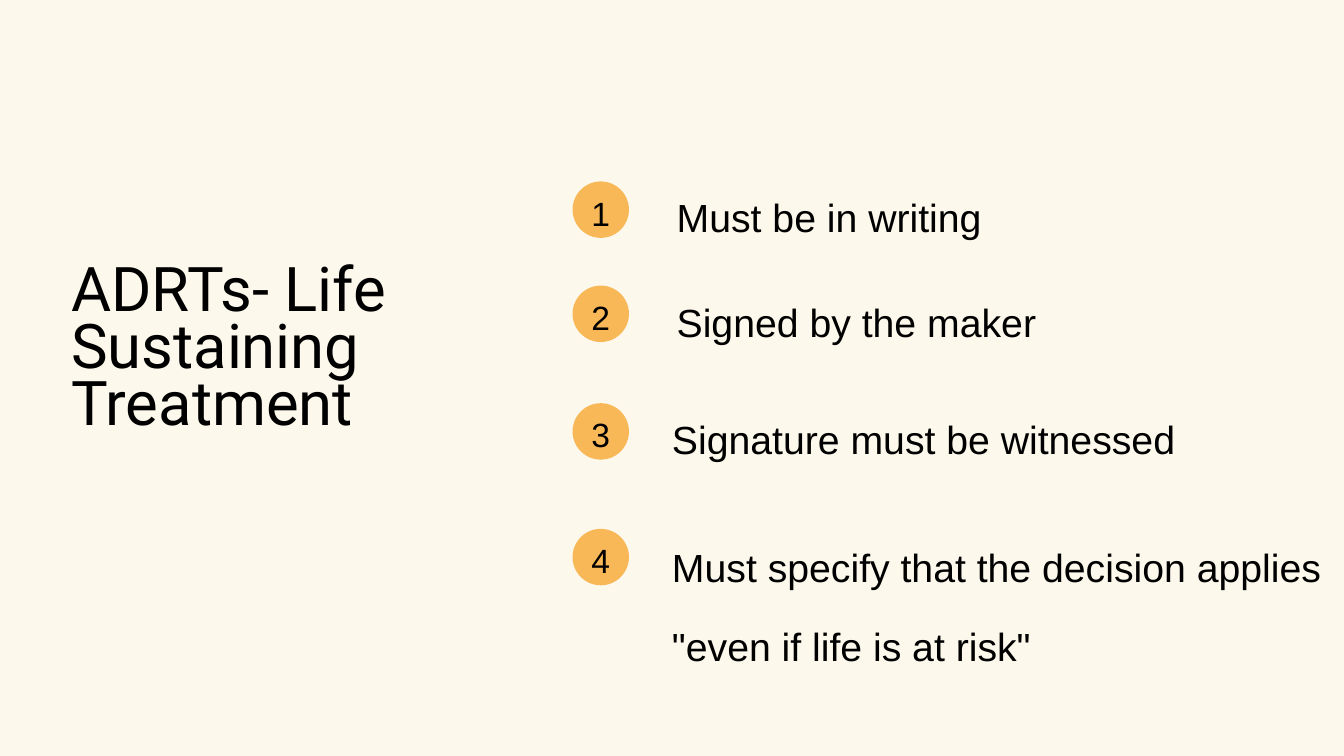
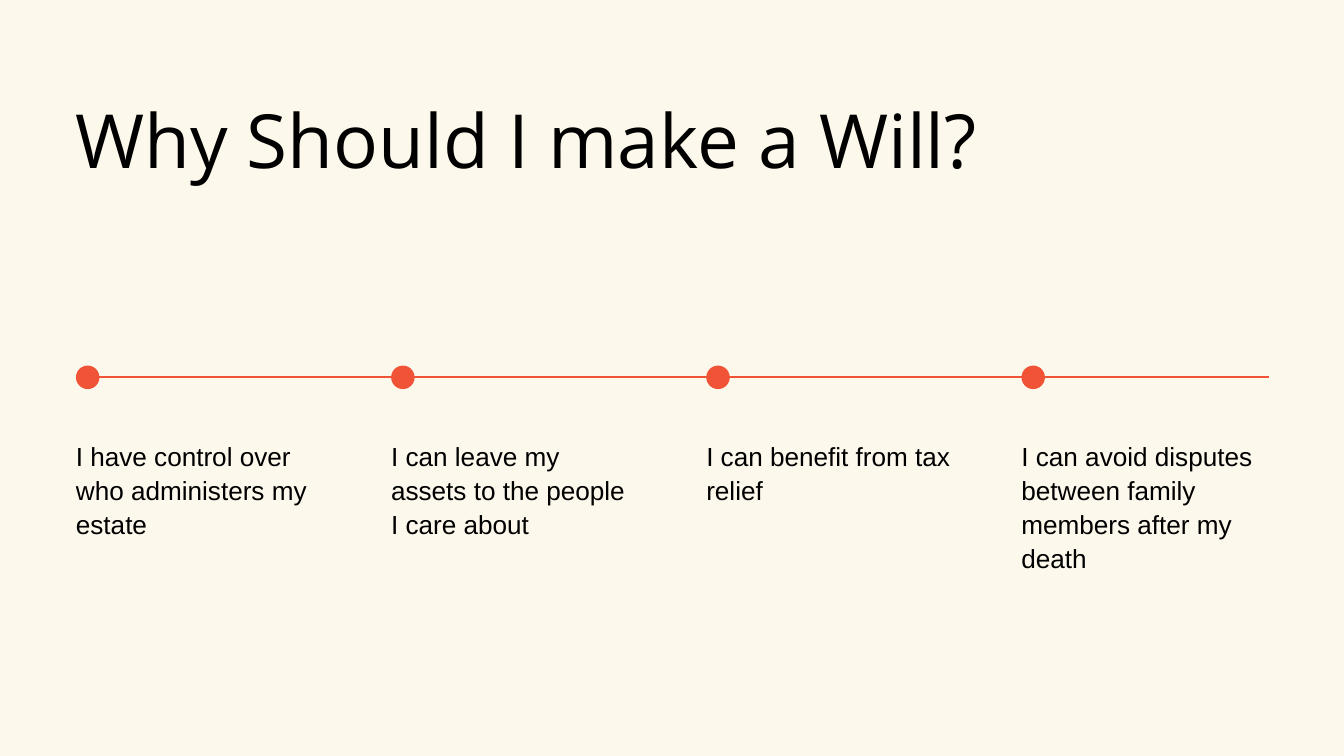
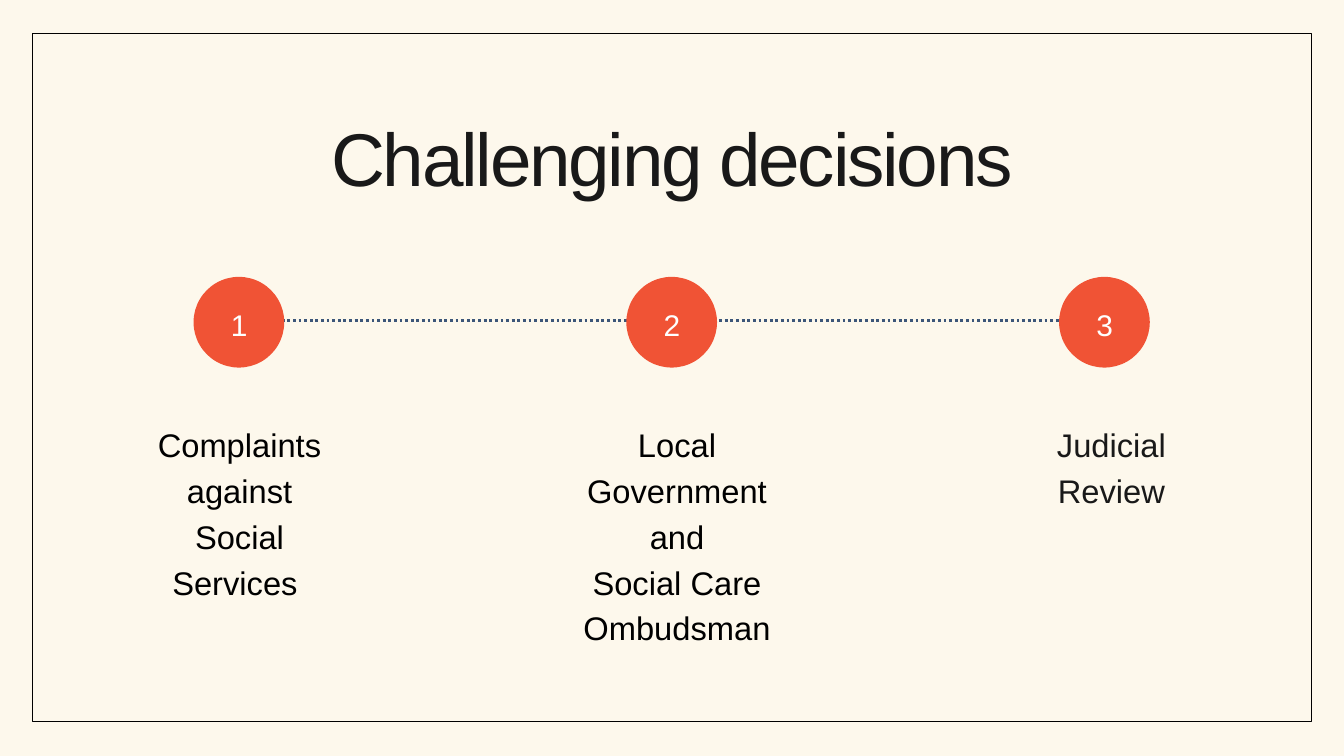
from lxml.etree import SubElement
from pptx import Presentation
from pptx.dml.color import RGBColor
from pptx.enum.dml import MSO_LINE
from pptx.enum.shapes import MSO_CONNECTOR, MSO_SHAPE
from pptx.enum.text import PP_ALIGN
from pptx.oxml.ns import qn
from pptx.util import Inches, Pt

CREAM, BLACK, CHARCOAL, WHITE = "FDF8EC", "000000", "191919", "FEFFFF"
AMBER, CORAL, SLATE = "F8B858", "F05335", "3C5679"


def color(value):
    return RGBColor.from_string(value)


class Deck:
    """Holds the shared style and the slide being built."""

    def __init__(self):
        self.deck = Presentation()
        self.deck.slide_width = Inches(20)
        self.deck.slide_height = Inches(11.25)
        self.page = None

    def new_page(self):
        self.page = self.deck.slides.add_slide(self.deck.slide_layouts[6])
        fill = self.page.background.fill
        fill.solid()
        fill.fore_color.rgb = color(CREAM)

    def text(self, left, top, width, height, paragraphs, size, leading,
             font="Arial", ink=BLACK, centered=False, tracking=None):
        box = self.page.shapes.add_textbox(
            Inches(left), Inches(top), Inches(width), Inches(height))
        frame = box.text_frame
        frame.word_wrap = True
        frame.margin_left = frame.margin_right = 0
        frame.margin_top = frame.margin_bottom = 0
        for index, words in enumerate(paragraphs):
            para = frame.add_paragraph() if index else frame.paragraphs[0]
            para.alignment = PP_ALIGN.CENTER if centered else PP_ALIGN.LEFT
            para.line_spacing = Pt(leading)
            span = para.add_run()
            span.text = words
            span.font.name = font
            span.font.size = Pt(size)
            span.font.color.rgb = color(ink)
            if tracking:
                span.font._element.set("spc", str(round(tracking * 100)))

    def shape(self, kind, left, top, width, height, fill, outline=None):
        shape = self.page.shapes.add_shape(
            kind, Inches(left), Inches(top), Inches(width), Inches(height))
        shape.shadow.inherit = False
        shape.fill.solid()
        shape.fill.fore_color.rgb = color(fill)
        if outline:
            shape.line.color.rgb = color(outline)
            shape.line.width = Pt(1.5)
        else:
            shape.line.fill.background()

    def circle(self, left, top, diameter, fill):
        self.shape(MSO_SHAPE.OVAL, left, top, diameter, diameter, fill)

    def rule(self, start, end, y, ink, weight, dash=None):
        line = self.page.shapes.add_connector(
            MSO_CONNECTOR.STRAIGHT, Inches(start), Inches(y), Inches(end), Inches(y))
        line.line.color.rgb = color(ink)
        line.line.width = Pt(weight)
        if dash:
            line.line.dash_style = dash
        SubElement(line._element.spPr, qn("a:effectLst"))


def build_requirements(deck):
    deck.new_page()
    deck.text(1.06, 3.97, 6.37, 2.59, ["ADRTs- Life Sustaining Treatment"],
              66, 61.2, font="Roboto")
    requirements = [
        (2.7, 10.07, 2.41, 1.05, "Must be in writing"),
        (4.25, 10.07, 3.97, 1.05, "Signed by the maker"),
        (6, 10, 5.72, 1.05, "Signature must be witnessed"),
        (7.87, 10, 7.62, 2.22,
         'Must specify that the decision applies "even if life is at risk"'),
    ]
    for number, (badge_top, left, top, height, words) in enumerate(requirements, 1):
        deck.circle(8.52, badge_top, 0.84, AMBER)
        deck.text(8.64, badge_top - 0.02, 0.6, 0.73, [str(number)], 36, 56.5,
                  centered=True)
        deck.text(left, top, 9.93, height, [words], 42, 84)


def build_reasons(deck):
    deck.new_page()
    deck.text(1.12, 1.39, 17.75, 1.33, ["Why Should I make a Will?"],
              80, 96, font="Open Sans")
    deck.rule(1.3, 18.88, 5.61, CORAL, 1.5)
    reasons = [
        "I have control over who administers my estate",
        "I can leave my assets to the people I care about",
        "I can benefit from tax relief",
        "I can avoid disputes between family members after my death",
    ]
    for index, reason in enumerate(reasons):
        left = 1.13 + 4.69 * index
        deck.circle(left, 5.44, 0.35, CORAL)
        deck.text(left, 6.52, 3.68, 2, [reason], 28, 36.4)


def build_challenges(deck):
    deck.new_page()
    deck.shape(MSO_SHAPE.RECTANGLE, 0.48, 0.5, 19.04, 10.24, CREAM, BLACK)
    deck.text(2.39, 1.78, 15.22, 1.26, ["Challenging decisions"], 80, 88,
              ink=CHARCOAL, centered=True, tracking=-2.4)
    deck.rule(4.11, 16.04, 4.77, SLATE, 3, MSO_LINE.ROUND_DOT)
    routes = [
        (2.11, 2.91, 2.68, BLACK, ["Complaints against", "Social Services "]),
        (8.29, 3.57, 3.36, BLACK, ["Local Government and", "Social Care Ombudsman"]),
        (15.48, 2.12, 1.33, CHARCOAL, ["Judicial Review"]),
    ]
    for index, (left, width, height, ink, words) in enumerate(routes):
        center = 10 + 6.44 * (index - 1)
        deck.circle(center - 0.68, 4.12, 1.35, CORAL)
        deck.text(center - 0.32, 4.47, 0.64, 0.59, [str(index + 1)], 32, 44.8,
                  ink=WHITE, centered=True, tracking=1.6)
        deck.text(left, 6.23, width, height, words, 35, 49, ink=ink, centered=True)


def main():
    deck = Deck()
    build_requirements(deck)
    build_reasons(deck)
    build_challenges(deck)
    deck.deck.save("out.pptx")


if __name__ == "__main__":
    main()
